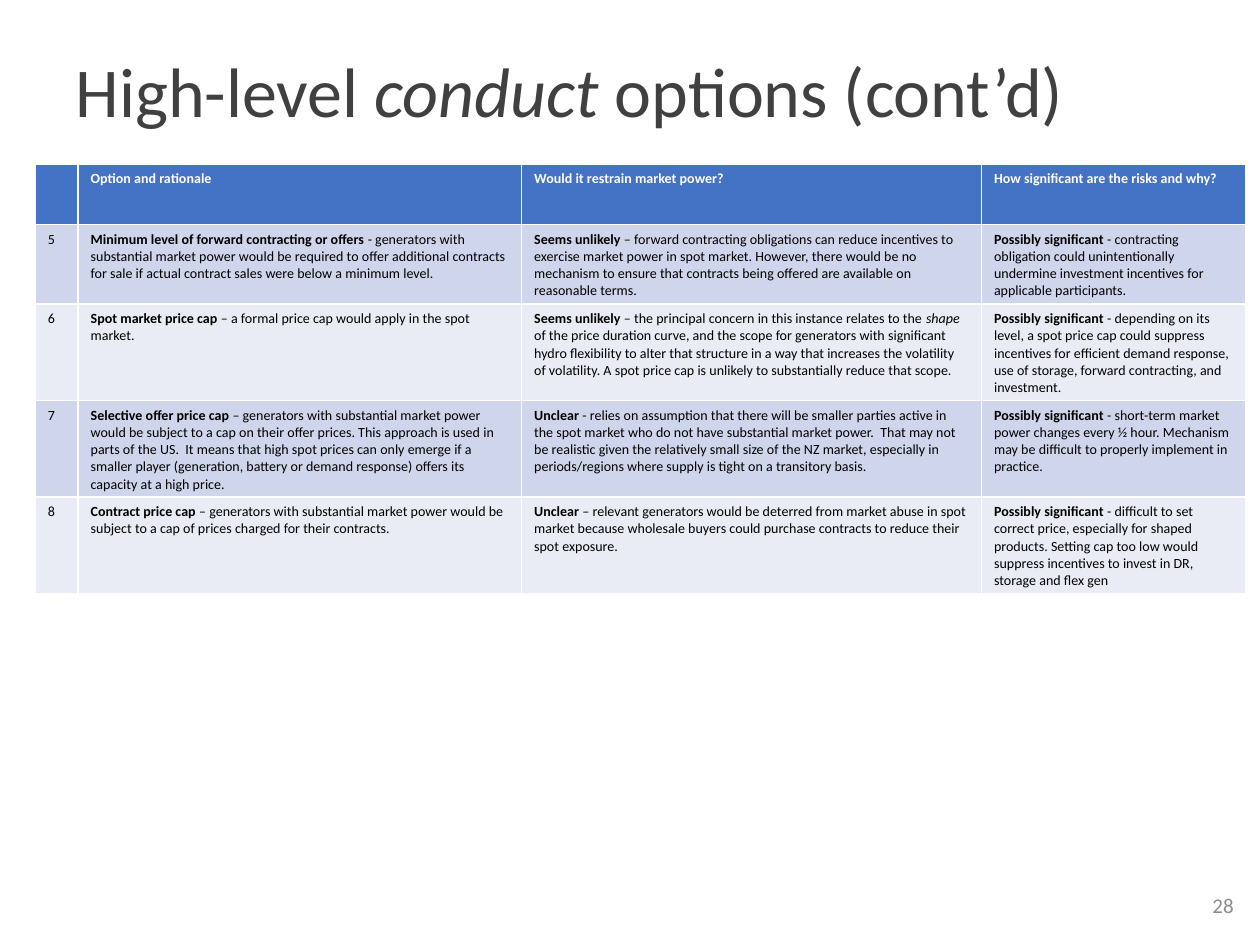
import pptx
import pptx.util
import pptx.dml.color
import pptx.enum.text

RGBColor = pptx.dml.color.RGBColor
WHITE = RGBColor(0xFF, 0xFF, 0xFF)
BLACK = RGBColor(0x00, 0x00, 0x00)
TITLE_GREY = RGBColor(0x40, 0x40, 0x40)
NUMBER_GREY = RGBColor(0x8C, 0x8C, 0x8C)
HEADER_BLUE = RGBColor(0x44, 0x72, 0xC4)
BAND_DARK = RGBColor(0xCF, 0xD5, 0xEA)
BAND_LIGHT = RGBColor(0xE9, 0xEB, 0xF5)

FONT = "Calibri"
COLUMN_WIDTHS = [0.34, 3.52, 3.65, 2.1]
ROW_HEIGHTS = [0.48, 0.59, 0.75, 0.75, 0.48]

HEADINGS = [
    "",
    "Option and rationale",
    "Would it restrain market power?",
    "How significant are the risks and why?",
]

# Each cell is a list of runs: (text, style), where style is "", "bold" or "italic"
OPTIONS = [
    [
        [("5", "")],
        [("Minimum level of forward contracting or offers ", "bold"),
         ("- generators with substantial market power would be required to offer additional "
          "contracts for sale if actual contract sales were below a minimum level.", "")],
        [("Seems unlikely", "bold"),
         (" – forward contracting obligations can reduce incentives to exercise market power in "
          "spot market. However, there would be no mechanism to ensure that contracts being "
          "offered are available on reasonable terms.", "")],
        [("Possibly significant", "bold"),
         (" - contracting obligation could unintentionally undermine investment incentives for "
          "applicable participants.", "")],
    ],
    [
        [("6", "")],
        [("Spot market price cap", "bold"),
         (" – a formal price cap would apply in the spot market.", "")],
        [("Seems unlikely", "bold"),
         (" – the principal concern in this instance relates to the ", ""),
         ("shape ", "italic"),
         ("of the price duration curve, and the scope for generators with significant hydro "
          "flexibility to alter that structure in a way that increases the volatility of "
          "volatility. A spot price cap is unlikely to substantially reduce that scope.", "")],
        [("Possibly significant", "bold"),
         (" - depending on its level, a spot price cap could suppress incentives for efficient "
          "demand response, use of storage, forward contracting, and investment.", "")],
    ],
    [
        [("7", "")],
        [("Selective offer price cap", "bold"),
         (" – generators with substantial market power would be subject to a cap on their offer "
          "prices. This approach is used in parts of the US.  It means that high spot prices can "
          "only emerge if a smaller player (generation, battery or demand response) offers its "
          "capacity at a high price.", "")],
        [("Unclear", "bold"),
         (" - relies on assumption that there will be smaller parties active in the spot market "
          "who do not have substantial market power.  That may not be realistic given the "
          "relatively small size of the NZ market, especially in periods/regions where supply is "
          "tight on a transitory basis.", "")],
        [("Possibly significant", "bold"),
         (" - short-term market power changes every ½ hour. Mechanism may be difficult to "
          "properly implement in practice.", "")],
    ],
    [
        [("8", "")],
        [("Contract price cap", "bold"),
         (" – generators with substantial market power would be subject to a cap of prices "
          "charged for their contracts.", "")],
        [("Unclear", "bold"),
         (" – relevant generators would be deterred from market abuse in spot market because "
          "wholesale buyers could purchase contracts to reduce their spot exposure.", "")],
        [("Possibly significant", "bold"),
         (" - difficult to set correct price, especially for shaped products. Setting cap too low "
          "would suppress incentives to invest in DR, storage and flex gen", "")],
    ],
]


def add_runs(paragraph, runs, size, color):
    for text, style in runs:
        run = paragraph.add_run()
        run.text = text
        run.font.name = FONT
        run.font.size = pptx.util.Pt(size)
        run.font.color.rgb = color
        run.font.bold = style == "bold"
        run.font.italic = style == "italic"


def place(shape, left, top, width, height):
    shape.left, shape.top = pptx.util.Inches(left), pptx.util.Inches(top)
    shape.width, shape.height = pptx.util.Inches(width), pptx.util.Inches(height)


presentation = pptx.Presentation()
presentation.slide_width = pptx.util.Inches(10)
presentation.slide_height = pptx.util.Inches(7.5)
slide = presentation.slides.add_slide(presentation.slide_layouts[5])

# Title
title = slide.shapes.title
place(title, 0.5, 0.13, 9, 1.25)
title.fill.solid()
title.fill.fore_color.rgb = WHITE
title.text_frame.auto_size = pptx.enum.text.MSO_AUTO_SIZE.NONE
title.text_frame.vertical_anchor = pptx.enum.text.MSO_ANCHOR.MIDDLE
paragraph = title.text_frame.paragraphs[0]
paragraph.alignment = pptx.enum.text.PP_ALIGN.LEFT
paragraph.line_spacing = 0.9
title_runs = [("High-level ", ""), ("conduct", "italic"), (" options (cont’d)", "")]
add_runs(paragraph, title_runs, 40, TITLE_GREY)

# Slide number
number = slide.shapes.add_textbox(0, 0, 0, 0)
place(number, 9.41, 6.98, 0.48, 0.4)
number.text_frame.word_wrap = True
number.text_frame.vertical_anchor = pptx.enum.text.MSO_ANCHOR.MIDDLE
paragraph = number.text_frame.paragraphs[0]
paragraph.alignment = pptx.enum.text.PP_ALIGN.RIGHT
add_runs(paragraph, [("28", "")], 12, NUMBER_GREY)

# Options table; the table style supplies the white rules
table_rows = [[[(heading, "bold")] if heading else [] for heading in HEADINGS]] + OPTIONS
frame = slide.shapes.add_table(len(table_rows), len(COLUMN_WIDTHS), 0, 0, 0, 0)
place(frame, 0.28, 1.3, sum(COLUMN_WIDTHS), sum(ROW_HEIGHTS))
table = frame.table
for column, width in zip(table.columns, COLUMN_WIDTHS):
    column.width = pptx.util.Inches(width)

for row_index, (row, height) in enumerate(zip(table.rows, ROW_HEIGHTS)):
    row.height = pptx.util.Inches(height)
    band = BAND_DARK if row_index % 2 else BAND_LIGHT
    for cell, runs in zip(row.cells, table_rows[row_index]):
        cell.fill.solid()
        cell.fill.fore_color.rgb = band if row_index else HEADER_BLUE
        add_runs(cell.text_frame.paragraphs[0], runs, 8, BLACK if row_index else WHITE)

presentation.save("out.pptx")
